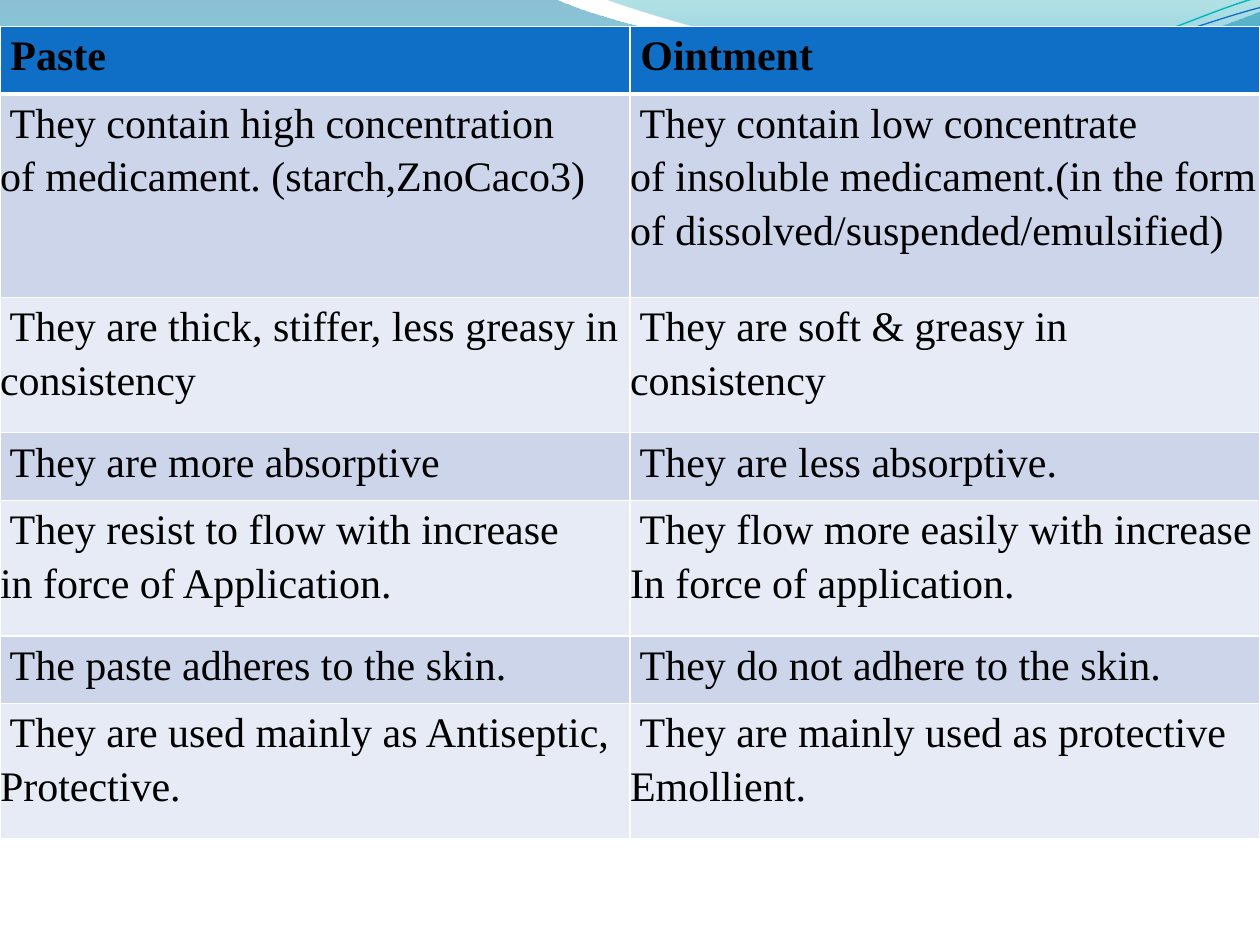
from dataclasses import dataclass
from math import cos, radians, sin

from lxml import etree
from pptx import Presentation
from pptx.dml.color import RGBColor
from pptx.oxml.ns import qn
from pptx.util import Inches, Pt

FONT = "Times New Roman"
WHITE = RGBColor(0xFF, 0xFF, 0xFF)
BLACK = RGBColor(0x00, 0x00, 0x00)
HEADER_BLUE = RGBColor(0x0F, 0x6F, 0xC6)
BAND_DARK = RGBColor(0xCC, 0xD5, 0xEA)
BAND_LIGHT = RGBColor(0xE7, 0xEB, 0xF5)
DEEP_BLUE = RGBColor(0x00, 0x74, 0xA1)
AQUA = RGBColor(0x00, 0xC6, 0xCF)
TEAL = RGBColor(0x00, 0xA1, 0xA9)
SKY_BLUE = RGBColor(0x00, 0x8B, 0xBF)
LINE_TEAL = RGBColor(0x0A, 0xB8, 0xBF)
LINE_ROTATION = 357.3

Point = tuple[float, float]


@dataclass(frozen=True)
class Stop:
    position: float
    color: RGBColor
    opacity: int


@dataclass(frozen=True)
class Wave:
    box: tuple[float, float, float, float]
    start: Point
    segments: list[tuple[Point, ...]]
    stops: tuple[Stop, ...] = ()
    line_color: RGBColor = WHITE
    line_width: float = 0
    rotation: float = 0


@dataclass(frozen=True)
class Row:
    height_units: int
    paste: str
    ointment: str


WAVES = [
    Wave((-0.01, -0.01, 10.02, 1.14), (0, 0), [
        ((4.4, -0.01),),
        ((4.76, 0.17), (6.64, 0.63), (7.58, 0.63)),
        ((8.53, 0.63), (9.58, 0.26), (10, 0.09)),
        ((10.01, 0.36),),
        ((9.83, 0.44), (8.7, 0.76), (7.46, 0.75)),
        ((6.22, 0.75), (3.82, 0.28), (2.57, 0.34)),
        ((1.29, 0.36), (0.46, 0.83), (-0.01, 1.13)),
        ((0, 0),),
    ], stops=(Stop(0, DEEP_BLUE, 45), Stop(1, AQUA, 55))),
    Wave((4.79, -0.01, 5.21, 0.7), (4.79, -0.01), [
        ((5.09, 0.11), (6.82, 0.62), (7.69, 0.65)),
        ((8.56, 0.69), (9.61, 0.32), (10, 0.21)),
        ((10, 0),),
        ((4.79, -0.01),),
    ], stops=(Stop(0, TEAL, 30), Stop(0.8, SKY_BLUE, 45))),
    Wave((-0.02, 0.22, 10.02, 0.71), (0, 1.11), [
        ((0.48, 0.93), (1.58, 0.57), (2.77, 0.52)),
        ((3.95, 0.47), (5.93, 0.89), (7.13, 0.8)),
        ((8.33, 0.71), (9.38, 0.15), (9.98, -0.02)),
    ], line_color=LINE_TEAL, line_width=0.85, rotation=LINE_ROTATION),
    Wave((-0.02, 0.3, 10.03, 0.58), (0, 1.04), [
        ((0.47, 0.96), (1.64, 0.61), (2.83, 0.56)),
        ((4.03, 0.51), (5.97, 0.84), (7.17, 0.75)),
        ((8.36, 0.67), (9.41, 0.21), (10, 0.06)),
    ], line_color=HEADER_BLUE, line_width=0.75, rotation=LINE_ROTATION),
]

ROWS = [
    Row(1, " Paste", " Ointment"),
    Row(3, " They contain high concentration\nof medicament. (starch,ZnoCaco3)",
        " They contain low concentrate\n"
        "of insoluble medicament.(in the form of dissolved/suspended/emulsified)"),
    Row(2, " They are thick, stiffer, less greasy in\nconsistency",
        " They are soft & greasy in consistency"),
    Row(1, " They are more absorptive", " They are less absorptive."),
    Row(2, " They resist to flow with increase\nin force of Application.",
        " They flow more easily with increase\nIn force of application."),
    Row(1, " The paste adheres to the skin.", " They do not adhere to the skin."),
    Row(2, " They are used mainly as Antiseptic,\nProtective.",
        " They are mainly used as protective\nEmollient."),
]


def to_local(wave: Wave, point: Point) -> tuple[int, int]:
    left, top, width, height = wave.box
    across = point[0] - left - width / 2
    down = point[1] - top - height / 2
    angle = radians(-wave.rotation)
    x = across * cos(angle) - down * sin(angle) + width / 2
    y = across * sin(angle) + down * cos(angle) + height / 2
    return Inches(x), Inches(y)


def add_command(outline, name: str, points: list[tuple[int, int]]) -> None:
    command = etree.SubElement(outline, qn(f"a:{name}"))
    for x, y in points:
        etree.SubElement(command, qn("a:pt"), x=str(x), y=str(y))


def bend_outline(shape, wave: Wave) -> None:
    outline = next(shape.element.spPr.iter(qn("a:path")))
    for child in list(outline):
        outline.remove(child)
    outline.set("w", str(shape.width))
    outline.set("h", str(shape.height))
    add_command(outline, "moveTo", [to_local(wave, wave.start)])
    for segment in wave.segments:
        name = "lnTo" if len(segment) == 1 else "cubicBezTo"
        add_command(outline, name, [to_local(wave, point) for point in segment])
    if wave.stops:
        add_command(outline, "close", [])


def draw_wave(page, wave: Wave) -> None:
    builder = page.shapes.build_freeform(*to_local(wave, wave.start), scale=1.0)
    ends = [to_local(wave, segment[-1]) for segment in wave.segments]
    builder.add_line_segments(ends, close=False)
    shape = builder.convert_to_shape()
    shape.left, shape.top, shape.width, shape.height = map(Inches, wave.box)
    shape.rotation = wave.rotation
    bend_outline(shape, wave)
    shape.shadow.inherit = False
    if not wave.stops:
        shape.fill.background()
        shape.line.color.rgb = wave.line_color
        shape.line.width = Pt(wave.line_width)
        return
    shape.line.fill.background()
    shape.fill.gradient()
    shape.fill.gradient_angle = 270
    for target, stop in zip(shape.fill.gradient_stops, wave.stops):
        target.position = stop.position
        target.color.rgb = stop.color
    for color, stop in zip(shape.element.spPr.iter(qn("a:srgbClr")), wave.stops):
        etree.SubElement(color, qn("a:alpha"), val=str(stop.opacity * 1000))


def add_border(cell, side: str, width: float) -> None:
    properties = cell._tc.get_or_add_tcPr()
    line = etree.SubElement(properties, qn(f"a:ln{side}"), w=str(Pt(width)))
    fill = etree.SubElement(line, qn("a:solidFill"))
    etree.SubElement(fill, qn("a:srgbClr"), val=str(WHITE))


def fill_cell(cell, text: str, row_index: int) -> None:
    header = row_index == 0
    add_border(cell, "L", 1)
    add_border(cell, "R", 1)
    add_border(cell, "T", 3 if row_index == 1 else 1)
    add_border(cell, "B", 3 if header else 1)
    cell.fill.solid()
    band = BAND_DARK if row_index % 2 else BAND_LIGHT
    cell.fill.fore_color.rgb = HEADER_BLUE if header else band
    cell.margin_left = cell.margin_right = cell.margin_top = cell.margin_bottom = 0
    cell.text_frame.text = text
    for para in cell.text_frame.paragraphs:
        para.line_spacing = 1.15
        for span in para.runs:
            span.font.name = FONT
            span.font.size = Pt(24)
            span.font.bold = header
            span.font.color.rgb = BLACK


def draw_table(page, rows: list[Row]) -> None:
    height = Inches(6.45)
    total_units = sum(row.height_units for row in rows)
    table = page.shapes.add_table(
        len(rows), 2, Inches(0), Inches(0.21), Inches(10), height
    ).table
    for index, row in enumerate(rows):
        table.rows[index].height = height * row.height_units // total_units
        for column, text in enumerate((row.paste, row.ointment)):
            fill_cell(table.cell(index, column), text, index)


def main() -> None:
    deck = Presentation()
    deck.slide_width, deck.slide_height = Inches(10), Inches(7.5)
    page = deck.slides.add_slide(deck.slide_layouts[6])
    for wave in WAVES:
        draw_wave(page, wave)
    draw_table(page, ROWS)
    deck.save("out.pptx")


if __name__ == "__main__":
    main()
